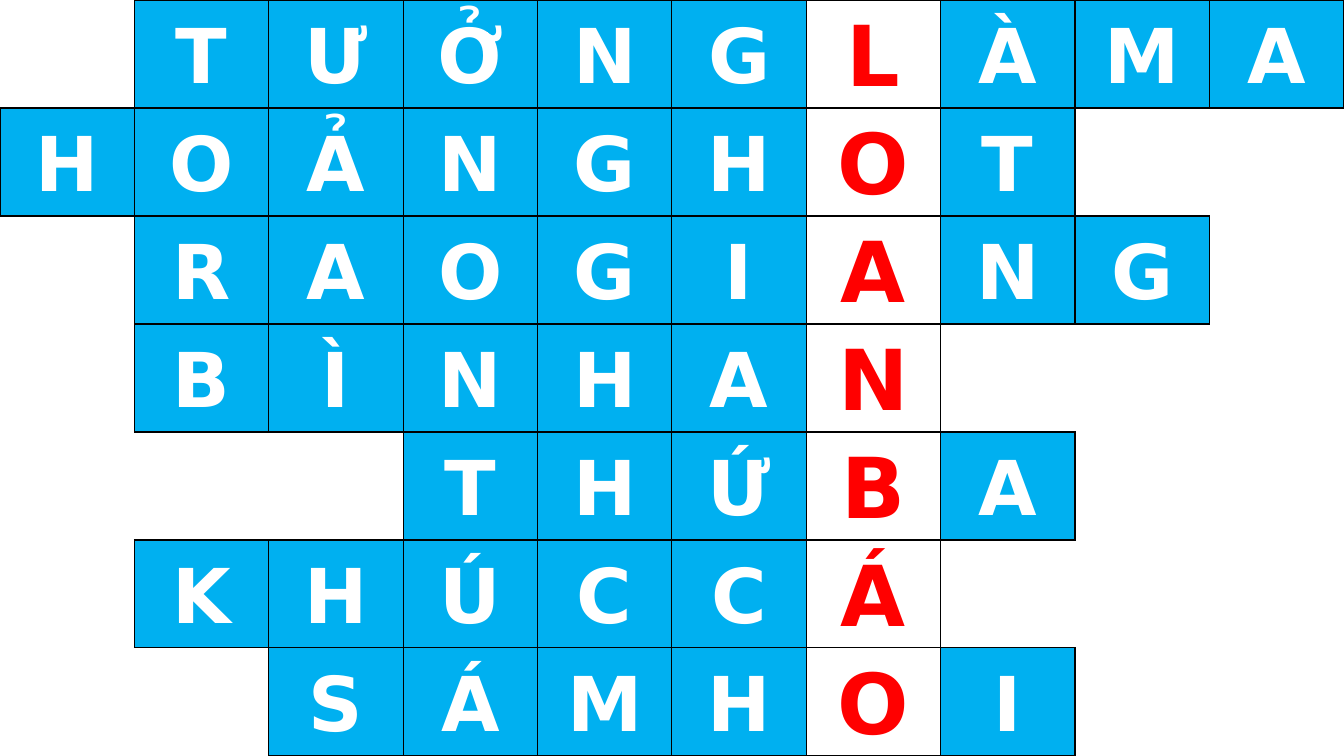
from lxml.etree import SubElement
from pptx import Presentation
from pptx.dml.color import RGBColor
from pptx.enum.text import MSO_ANCHOR as Anchor, PP_ALIGN as Align
from pptx.oxml.ns import qn
from pptx.util import Inches, Pt

SLIDE_WIDTH, SLIDE_HEIGHT = Inches(13.33), Inches(7.5)
COLUMNS = 10
KEY_COLUMN = 6
BLUE, WHITE, RED, BLACK = "00B0F0", "FFFFFF", "FF0000", "000000"

# Each answer with the column of its first letter
ANSWERS = [
    (1, "TƯỞNGLÀMA"),
    (0, "HOẢNGHOT"),
    (1, "RAOGIANG"),
    (1, "BÌNHAN"),
    (3, "THỨBA"),
    (1, "KHÚCCÁ"),
    (2, "SÁMHOI"),
]
LETTERS = {
    (row, start + offset): letter
    for row, (start, answer) in enumerate(ANSWERS)
    for offset, letter in enumerate(answer)
}
# Border tags with the step to the neighbouring cell
SIDES = {"a:lnL": (0, -1), "a:lnR": (0, 1), "a:lnT": (-1, 0), "a:lnB": (1, 0)}


def color(value):
    return RGBColor.from_string(value)


def apply_format(target, values):
    for name, value in values.items():
        setattr(target, name, value)


def set_borders(cell, row, column):
    """Draw each side that touches a letter and clear the others."""
    properties = cell._tc.get_or_add_tcPr()
    for tag, (down, right) in SIDES.items():
        line = SubElement(properties, qn(tag), w=str(Pt(1)))
        if (row, column) in LETTERS or (row + down, column + right) in LETTERS:
            fill = SubElement(line, qn("a:solidFill"))
            SubElement(fill, qn("a:srgbClr"), val=BLACK)
        else:
            SubElement(line, qn("a:noFill"))


def write_letter(cell, letter, is_key):
    apply_format(cell, {
        "vertical_anchor": Anchor.MIDDLE,
        "margin_left": Inches(0.07), "margin_right": Inches(0.07),
        "margin_top": 0, "margin_bottom": 0,
    })
    cell.fill.solid()
    cell.fill.fore_color.rgb = color(WHITE if is_key else BLUE)
    paragraph = cell.text_frame.paragraphs[0]
    apply_format(paragraph, {
        "alignment": Align.CENTER, "line_spacing": 1.07, "space_after": Pt(8),
    })
    run = paragraph.add_run()
    run.text = letter
    apply_format(run.font, {
        "name": "DejaVu Sans", "bold": True, "size": Pt(60 if is_key else 54),
    })
    run.font.color.rgb = color(RED if is_key else WHITE)


def add_crossword(slide):
    table = slide.shapes.add_table(
        len(ANSWERS), COLUMNS, 0, 0, SLIDE_WIDTH, SLIDE_HEIGHT).table
    apply_format(table, {"first_row": False, "horz_banding": False})
    for row in range(len(ANSWERS)):
        for column in range(COLUMNS):
            cell = table.cell(row, column)
            set_borders(cell, row, column)
            if (row, column) in LETTERS:
                write_letter(cell, LETTERS[row, column], column == KEY_COLUMN)
            else:
                cell.fill.background()


def main():
    presentation = Presentation()
    apply_format(presentation, {
        "slide_width": SLIDE_WIDTH, "slide_height": SLIDE_HEIGHT,
    })
    slide = presentation.slides.add_slide(presentation.slide_layouts[6])
    add_crossword(slide)
    presentation.save("out.pptx")


if __name__ == "__main__":
    main()
